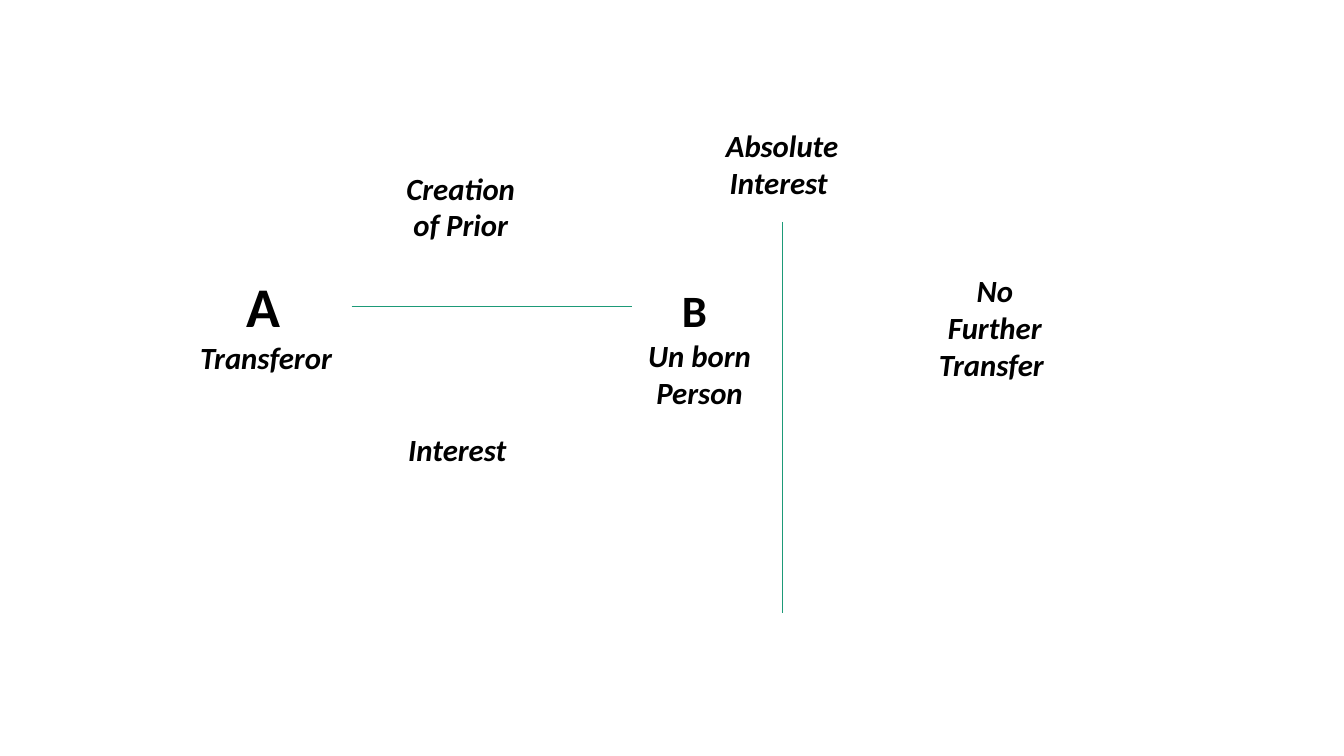
from dataclasses import dataclass
from typing import NamedTuple

from lxml.etree import SubElement
from pptx import Presentation
from pptx.dml.color import RGBColor
from pptx.enum.shapes import MSO_CONNECTOR
from pptx.enum.text import MSO_AUTO_SIZE, PP_ALIGN
from pptx.oxml.ns import qn
from pptx.util import Cm, Pt


@dataclass(frozen=True)
class Theme:
    font: str = "Calibri"
    text: RGBColor = RGBColor(0, 0, 0)
    line: RGBColor = RGBColor(0x1D, 0x9A, 0x78)
    line_width: float = 0.5
    label_size: int = 22
    transferor_size: int = 40
    person_size: int = 32


class Box(NamedTuple):
    left: float
    top: float
    width: float
    height: float


THEME = Theme()
LABEL_WIDTH = 3.4
TWO_LINE_HEIGHT = 2.13


def label_format(size=THEME.label_size, italic=True):
    return {"name": THEME.font, "size": Pt(size), "bold": True, "italic": italic}


def add_label(slide, box, *lines):
    shape = slide.shapes.add_textbox(*(Cm(length) for length in box))
    frame = shape.text_frame
    frame.word_wrap = True
    frame.auto_size = MSO_AUTO_SIZE.SHAPE_TO_FIT_TEXT
    for index, (text, font_format) in enumerate(lines):
        paragraph = frame.add_paragraph() if index else frame.paragraphs[0]
        paragraph.alignment = PP_ALIGN.CENTER
        run = paragraph.add_run()
        run.text = text
        for name, value in font_format.items():
            setattr(run.font, name, value)
        run.font.color.rgb = THEME.text


def add_line(slide, *ends):
    connector = slide.shapes.add_connector(
        MSO_CONNECTOR.STRAIGHT, *(Cm(length) for length in ends)
    )
    connector.line.color.rgb = THEME.line
    connector.line.width = Pt(THEME.line_width)
    SubElement(connector._element.spPr, qn("a:effectLst"))


def draw_prior_interest(slide, box):
    label_left = box.left + 6.23
    person_left = box.left + box.width - LABEL_WIDTH
    line_top = box.top + 3.58
    add_label(
        slide,
        Box(box.left, box.top + 2.59, 6.22, 2.9),
        ("A ", label_format(THEME.transferor_size, False)),
        ("Transferor ", label_format()),
    )
    add_label(
        slide,
        Box(label_left, box.top, LABEL_WIDTH, TWO_LINE_HEIGHT),
        ("Creation of Prior", label_format()),
    )
    add_label(
        slide,
        Box(label_left, box.top + box.height - 1.19, LABEL_WIDTH, 1.19),
        ("Interest ", label_format()),
    )
    add_label(
        slide,
        Box(person_left, box.top + 2.87, LABEL_WIDTH, 3.51),
        ("B ", label_format(THEME.person_size, False)),
        ("Un born Person", label_format()),
    )
    add_line(slide, box.left + 5.18, line_top, person_left, line_top)


def draw_absolute_interest(slide, box):
    line_left = box.left + LABEL_WIDTH / 2
    add_label(
        slide,
        Box(box.left, box.top, LABEL_WIDTH, TWO_LINE_HEIGHT),
        ("Absolute Interest ", label_format()),
    )
    add_label(
        slide,
        Box(box.left + box.width - LABEL_WIDTH, box.top + 3.66, LABEL_WIDTH, 3.07),
        ("No Further Transfer ", label_format()),
    )
    add_line(slide, line_left, box.top + 2.52, line_left, box.top + box.height)


def main():
    presentation = Presentation()
    presentation.slide_width = Cm(33.87)
    presentation.slide_height = Cm(19.05)
    slide = presentation.slides.add_slide(presentation.slide_layouts[6])
    draw_prior_interest(slide, Box(3.68, 4.14, 15.65, 7.77))
    draw_absolute_interest(slide, Box(18.01, 3.07, 8.76, 12.37))
    presentation.save("out.pptx")


if __name__ == "__main__":
    main()
